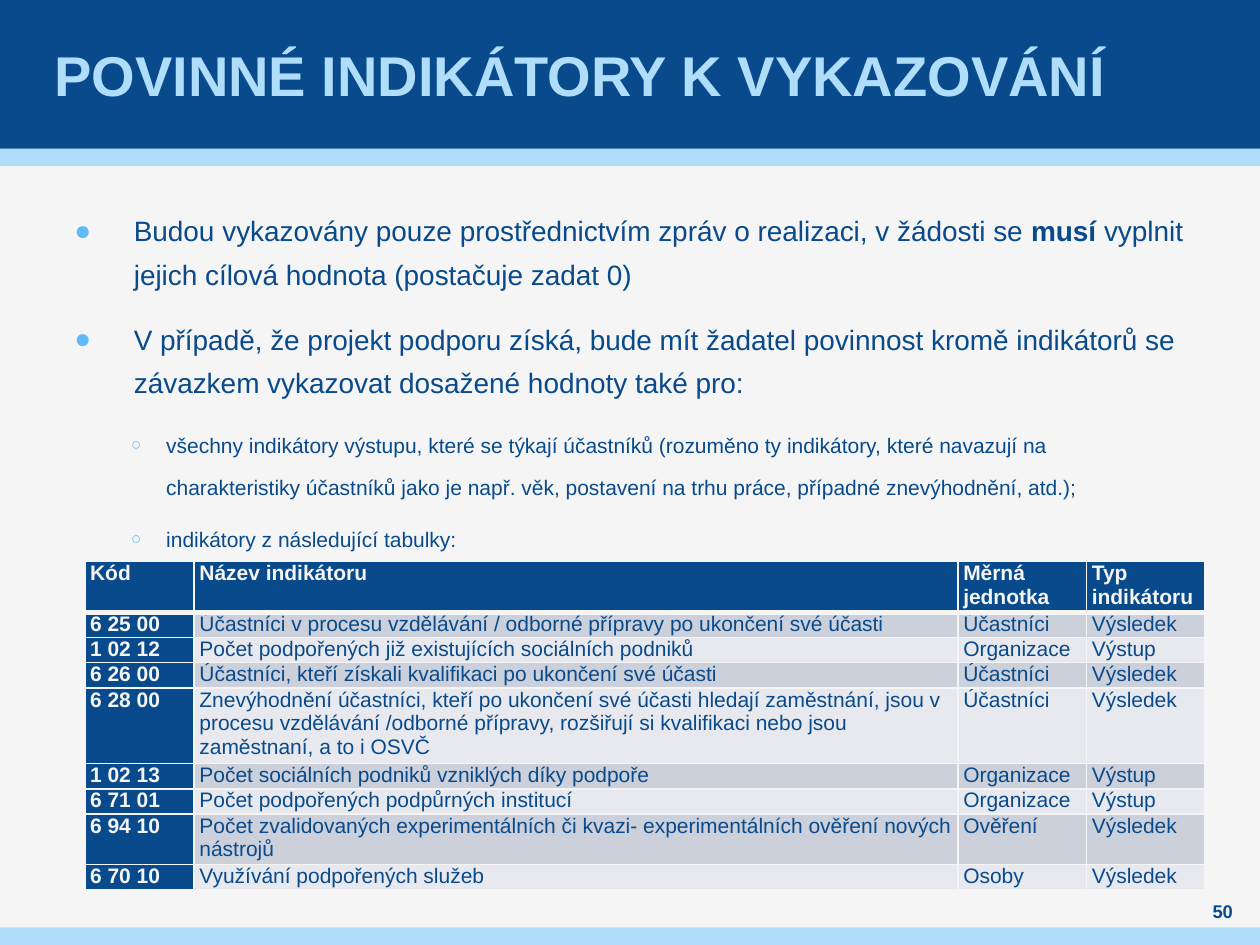
from lxml.etree import SubElement as Sub
from pptx import Presentation
from pptx.dml.color import RGBColor as RGB
from pptx.enum.shapes import MSO_SHAPE as Shape
from pptx.enum.text import MSO_ANCHOR as Anchor, PP_ALIGN as Align
from pptx.oxml.ns import qn
from pptx.util import Pt

HEX = {"navy": "084A8B", "sky": "AFDDFA", "dot": "5FBBF5",
       "paper": "F5F5F5", "odd": "CCD0DA", "even": "E7E9EE"}

POINTS = [
    (0, ["Budou vykazovány pouze prostřednictvím zpráv o realizaci, v žádosti se ",
         "musí", " vyplnit jejich cílová hodnota (postačuje zadat 0)"]),
    (0, ["V případě, že projekt podporu získá, bude mít žadatel povinnost kromě "
         "indikátorů se závazkem vykazovat dosažené hodnoty také pro:"]),
    (1, ["všechny indikátory výstupu, které se týkají účastníků (rozuměno ty "
         "indikátory, které navazují na charakteristiky účastníků jako je např. věk, "
         "postavení na trhu práce, případné znevýhodnění, atd.);"]),
    (1, ["indikátory z následující tabulky:"]),
]
# left indent, hanging, line spacing, gap, bullet, bullet percent, text size
LEVELS = [(34, 34, 1.3, 6, "●", 100, 16),
          (52.5, 20, Pt(24), 3, "○", 80, 12)]

ROWS = [
    ("Kód", "Název indikátoru", "Měrná jednotka", "Typ indikátoru"),
    ("6 25 00", "Účastníci v procesu vzdělávání / odborné přípravy po ukončení své účasti",
     "Účastníci", "Výsledek"),
    ("1 02 12", "Počet podpořených již existujících sociálních podniků",
     "Organizace", "Výstup"),
    ("6 26 00", "Účastníci, kteří získali kvalifikaci po ukončení své účasti",
     "Účastníci", "Výsledek"),
    ("6 28 00", "Znevýhodnění účastníci, kteří po ukončení své účasti hledají zaměstnání, "
     "jsou v procesu vzdělávání /odborné přípravy, rozšiřují si kvalifikaci nebo jsou "
     "zaměstnaní, a to i OSVČ", "Účastníci", "Výsledek"),
    ("1 02 13", "Počet sociálních podniků vzniklých díky podpoře",
     "Organizace", "Výstup"),
    ("6 71 01", "Počet podpořených podpůrných institucí", "Organizace", "Výstup"),
    ("6 94 10", "Počet zvalidovaných experimentálních či kvazi- experimentálních "
     "ověření nových nástrojů", "Ověření", "Výsledek"),
    ("6 70 10", "Využívání podpořených služeb", "Osoby", "Výsledek"),
]
LINES = [2, 1, 1, 1, 3, 1, 1, 2, 1]
COLS = [62.5, 436.5, 73.5, 67.5]


def color(name):
    return RGB.from_string(HEX[name])


def style(para, size, name, bold=False):
    font = para.font
    font.name, font.size, font.bold = "Arial", Pt(size), bold
    font.color.rgb = color(name)


def band(slide, box, name):
    bar = slide.shapes.add_shape(Shape.RECTANGLE, *map(Pt, box))
    bar.shadow.inherit = False
    bar.fill.solid()
    bar.fill.fore_color.rgb = color(name)
    bar.line.fill.background()


def frame(slide, box, anchor=Anchor.TOP, side=0):
    """Add a wrapping text box and return its text frame."""
    text = slide.shapes.add_textbox(*map(Pt, box)).text_frame
    text.word_wrap, text.vertical_anchor = True, anchor
    text.margin_left = text.margin_right = Pt(side)
    text.margin_top = text.margin_bottom = 0
    return text


def label(slide, box, words, size, name, align=Align.LEFT, side=0):
    para = frame(slide, box, Anchor.MIDDLE, side).paragraphs[0]
    para.text, para.alignment = words, align
    style(para, size, name, True)


def header(slide, box):
    left, top, width, height = box
    band(slide, (left, top + height, width, 10), "sky")
    band(slide, box, "navy")
    label(slide, (left + 28, top, width - 57, height),
          "POVINNÉ INDIKÁTORY K VYKAZOVÁNÍ", 32, "sky", side=3)


def footer(slide, box):
    left, top, width, height = box
    band(slide, box, "sky")
    label(slide, (left + width - 39.5, top - 16.5, 36.5, 14.5),
          "50", 10.5, "navy", Align.CENTER)


def bullet(para, level):
    left, hang, pitch, gap, mark, scale, size = LEVELS[level]
    para.level, para.line_spacing = level, pitch
    para.space_before = para.space_after = Pt(gap)
    props = para._p.get_or_add_pPr()
    props.set("marL", str(Pt(left)))
    props.set("indent", str(-Pt(hang)))
    Sub(Sub(props, qn("a:buClr")), qn("a:srgbClr"), val=HEX["dot"])
    Sub(props, qn("a:buSzPct"), val=str(scale * 1000))
    Sub(props, qn("a:buFont"), typeface="Arial")
    Sub(props, qn("a:buChar"), char=mark)
    style(para, size, "navy")


def points(slide, box):
    text = frame(slide, box)
    for i, (level, parts) in enumerate(POINTS):
        para = text.add_paragraph() if i else text.paragraphs[0]
        bullet(para, level)
        for part in parts:
            run = para.add_run()
            run.text = part
            if part == "musí":
                run.font.bold = True


def border(cell, row):
    """Draw the cell's edges, with a thick rule below the header row."""
    props = cell._tc.get_or_add_tcPr()
    thick = {0: "lnB", 1: "lnT"}.get(row)
    for i, side in enumerate(("lnL", "lnR", "lnT", "lnB")):
        edge = props.makeelement(qn("a:" + side),
                                 {"w": str(Pt(3 if side == thick else 1))})
        Sub(Sub(edge, qn("a:solidFill")), qn("a:srgbClr"), val=HEX["paper"])
        props.insert(i, edge)


def grid(slide, left, top):
    line = 13.4
    table = slide.shapes.add_table(
        len(ROWS), len(COLS), Pt(left), Pt(top),
        Pt(sum(COLS)), Pt(line * sum(LINES))).table
    for col, width in zip(table.columns, COLS):
        col.width = Pt(width)
    for r, (row, words) in enumerate(zip(table.rows, ROWS)):
        row.height = Pt(line * LINES[r])
        for c, (cell, word) in enumerate(zip(row.cells, words)):
            dark = r == 0 or c == 0
            cell.margin_left = Pt(3)
            cell.margin_right = cell.margin_top = cell.margin_bottom = 0
            cell.fill.solid()
            cell.fill.fore_color.rgb = color(
                "navy" if dark else "odd" if r % 2 else "even")
            border(cell, r)
            para = cell.text_frame.paragraphs[0]
            para.text = word
            style(para, 12, "paper" if dark else "navy", dark)


def main():
    deck = Presentation()
    deck.slide_width, deck.slide_height = Pt(720), Pt(540)
    slide = deck.slides.add_slide(deck.slide_layouts[6])
    slide.background.fill.solid()
    slide.background.fill.fore_color.rgb = color("paper")
    header(slide, (0, 0, 720, 85))
    footer(slide, (0, 530, 720, 10))
    points(slide, (42.5, 116.5, 635, 340))
    grid(slide, 48.5, 321)
    deck.save("out.pptx")


if __name__ == "__main__":
    main()
